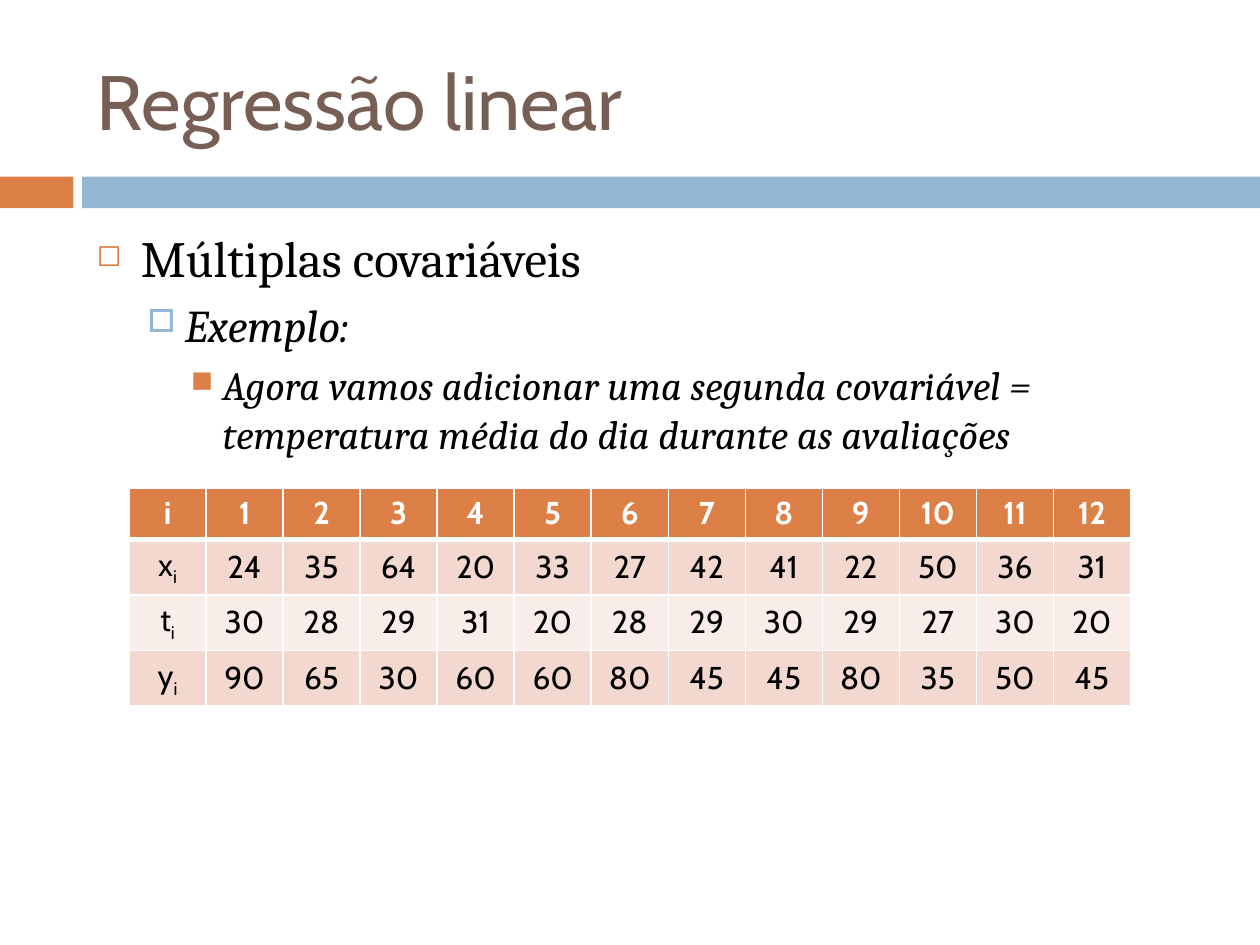
from dataclasses import dataclass

from lxml import etree
from pptx import Presentation
from pptx.dml.color import RGBColor
from pptx.enum import shapes, text
from pptx.oxml import ns
from pptx.util import Cm, Pt

TITLE = "Regressão linear"

# text, bullet, bullet size %, left indent cm, hanging cm, space before pt
OUTLINE = [
    ("Múltiplas covariáveis", "◻", 60, 0.89, 0.89, 7),
    ("Exemplo:", "□", 70, 1.78, 0.76, 5.5),
    ("Agora vamos adicionar uma segunda covariável = "
     "temperatura média do dia durante as avaliações", "■", 75, 2.54, 0.64, 5),
]

# variable, subscript, values
SAMPLES = [
    ("i", "", range(1, 13)),
    ("x", "i", [24, 35, 64, 20, 33, 27, 42, 41, 22, 50, 36, 31]),
    ("t", "i", [30, 28, 29, 31, 20, 28, 29, 30, 29, 27, 30, 20]),
    ("y", "i", [90, 65, 30, 60, 60, 80, 45, 45, 80, 35, 50, 45]),
]


@dataclass(frozen=True)
class Theme:
    heading_font: str = "Cabin"
    body_font: str = "Cambria"
    title: str = "775F55"
    ink: str = "000000"
    paper: str = "FFFFFF"
    orange: str = "DD8047"
    blue: str = "94B6D2"
    bands: tuple = ("F2D8CF", "F9EDE9")
    title_size: float = 44
    outline_sizes: tuple = (29, 26, 23)
    table_size: float = 18


THEME = Theme()


def style(paragraph, font_name, size, color, bold=False, italic=False):
    font = paragraph.font
    font.name, font.size = font_name, Pt(size)
    font.bold, font.italic = bold, italic
    font.color.rgb = RGBColor.from_string(color)


def fill(target, color):
    target.fill.solid()
    target.fill.fore_color.rgb = RGBColor.from_string(color)


def add_child(parent, tag, **attributes):
    return etree.SubElement(parent, ns.qn(tag), attributes)


def add_band(slide, left, width, color):
    band = slide.shapes.add_shape(shapes.MSO_SHAPE.RECTANGLE,
                                  Cm(left), Cm(3.56), Cm(width), Cm(0.64))
    band.shadow.inherit = False
    fill(band, color)
    band.line.fill.background()


def add_title(slide):
    title = slide.shapes.title
    title.left, title.top, title.width, title.height = Cm(1.7), Cm(0.64), Cm(22.66), Cm(2.74)
    frame = title.text_frame
    frame.text = TITLE
    frame.vertical_anchor = text.MSO_ANCHOR.MIDDLE
    heading = frame.paragraphs[0]
    heading.alignment = text.PP_ALIGN.LEFT
    style(heading, THEME.heading_font, THEME.title_size, THEME.title)


def add_outline(slide):
    frame = slide.shapes.add_textbox(Cm(1.7), Cm(4.45), Cm(22.66), Cm(13.28)).text_frame
    frame.word_wrap = True
    for level, (words, bullet, percent, indent, hanging, before) in enumerate(OUTLINE):
        item = frame.add_paragraph() if level else frame.paragraphs[0]
        item.text = words
        item.level = level
        item.space_before = Pt(before)
        properties = item._p.get_or_add_pPr()
        properties.set("marL", str(Cm(indent)))
        properties.set("indent", str(-Cm(hanging)))
        bullet_color = THEME.blue if level == 1 else THEME.orange
        add_child(add_child(properties, "a:buClr"), "a:srgbClr", val=bullet_color)
        add_child(properties, "a:buSzPct", val=str(percent * 1000))
        add_child(properties, "a:buChar", char=bullet)
        style(item, THEME.body_font, THEME.outline_sizes[level], THEME.ink, italic=level > 0)


def set_borders(cell, widths):
    """Draw the left, right, top and bottom borders, widths in points."""
    properties = cell._tc.get_or_add_tcPr()
    for position, (side, width) in enumerate(zip("LRTB", widths)):
        line = add_child(properties, f"a:ln{side}", w=str(Pt(width)))
        add_child(add_child(line, "a:solidFill"), "a:srgbClr", val=THEME.paper)
        properties.insert(position, line)


def add_samples(slide):
    row_count, column_count = len(SAMPLES), len(SAMPLES[0][2]) + 1
    table = slide.shapes.add_table(row_count, column_count, Cm(2.6), Cm(9.84),
                                   Cm(20.19), Cm(4.12)).table
    for row, (variable, subscript, values) in enumerate(SAMPLES):
        header = row == 0
        background = THEME.orange if header else THEME.bands[(row - 1) % 2]
        for column, label in enumerate([variable, *values]):
            cell = table.cell(row, column)
            cell.vertical_anchor = text.MSO_ANCHOR.MIDDLE
            fill(cell, background)
            set_borders(cell, (1, 1, 3 if row == 1 else 1, 3 if header else 1))
            entry = cell.text_frame.paragraphs[0]
            entry.alignment = text.PP_ALIGN.CENTER
            style(entry, THEME.heading_font, THEME.table_size,
                  THEME.paper if header else THEME.ink, bold=header)
            entry.add_run().text = str(label)
            if subscript and column == 0:
                index = entry.add_run()
                index.text = subscript
                index._r.get_or_add_rPr().set("baseline", "-25000")


def main():
    deck = Presentation()
    deck.slide_width, deck.slide_height = Cm(25.4), Cm(19.05)
    slide = deck.slides.add_slide(deck.slide_layouts[5])
    add_band(slide, 0, 1.48, THEME.orange)
    add_band(slide, 1.65, 23.75, THEME.blue)
    add_title(slide)
    add_outline(slide)
    add_samples(slide)
    deck.save("out.pptx")


if __name__ == "__main__":
    main()
